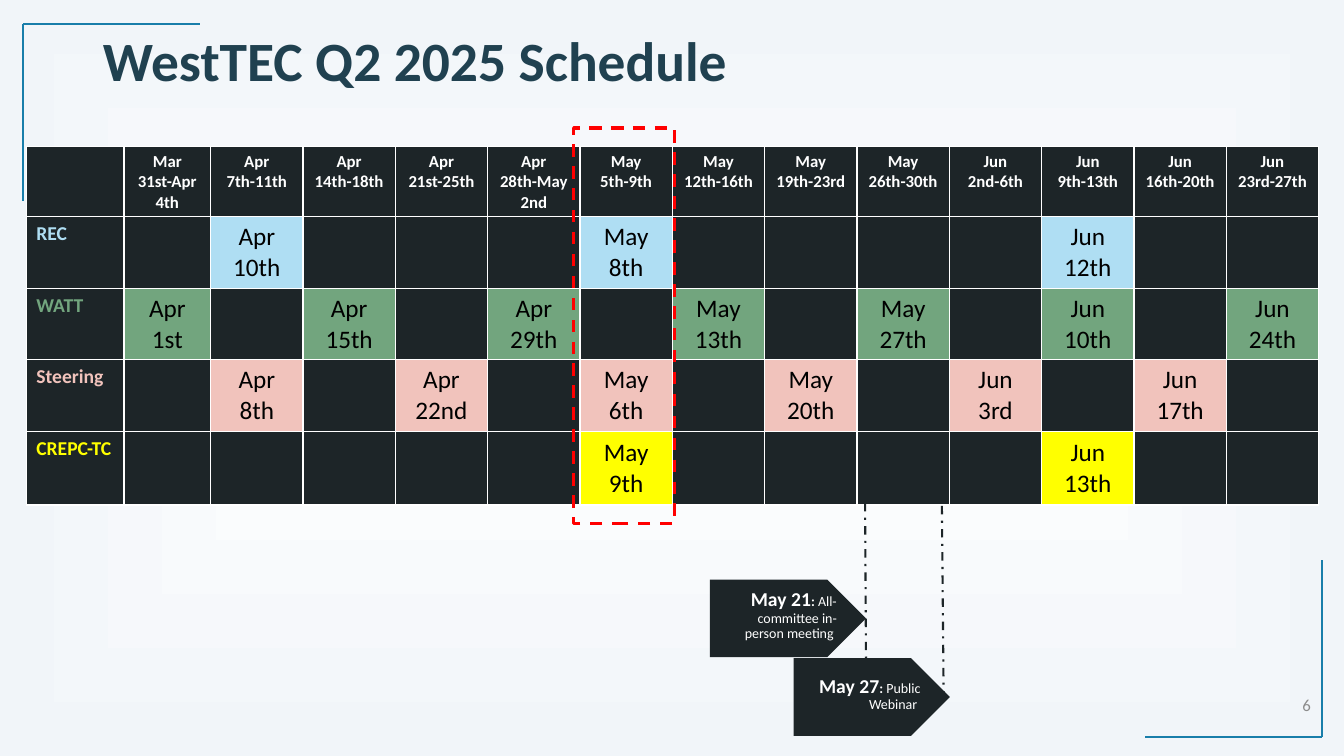
from dataclasses import dataclass

from lxml import etree
from pptx import Presentation
from pptx.dml.color import RGBColor
from pptx.enum.dml import MSO_LINE_DASH_STYLE as Dash
from pptx.enum.shapes import MSO_CONNECTOR as Connector, MSO_SHAPE as Shape
from pptx.enum.text import MSO_ANCHOR as Anchor, MSO_AUTO_SIZE as AutoSize, PP_ALIGN as Align
from pptx.oxml.ns import qn
from pptx.util import Inches, Pt


@dataclass(frozen=True)
class Theme:
    font: str = "Calibri"
    dark: str = "1D2528"
    white: str = "FFFFFF"
    black: str = "000000"
    backdrop: str = "F1F5F9"
    accent: str = "197EAA"
    title: str = "204150"
    number: str = "8C8C8C"
    highlight: str = "FF0000"
    title_size: float = 39.6
    date_size: float = 18
    label_size: float = 14
    small_size: float = 12
    note_size: float = 10


THEME = Theme()
WEEKS = [
    "Mar\n31st-Apr 4th", "Apr\n7th-11th", "Apr\n14th-18th", "Apr\n21st-25th",
    "Apr\n28th-May 2nd", "May\n5th-9th", "May\n12th-16th", "May\n19th-23rd",
    "May\n26th-30th", "Jun\n2nd-6th", "Jun\n9th-13th", "Jun\n16th-20th",
    "Jun 23rd-27th",
]
# Committee, colour, and meeting date by week column
COMMITTEES = [
    ("REC", "AFDEF3", {2: "Apr 10th", 6: "May 8th", 11: "Jun 12th"}),
    ("WATT", "72A57E", {1: "Apr 1st", 3: "Apr 15th", 5: "Apr 29th", 7: "May 13th",
                        9: "May 27th", 11: "Jun 10th", 13: "Jun 24th"}),
    ("Steering", "F1C3BC", {2: "Apr 8th", 4: "Apr 22nd", 6: "May 6th", 8: "May 20th",
                            10: "Jun 3rd", 12: "Jun 17th"}),
    ("CREPC-TC", "FFFF00", {6: "May 9th", 11: "Jun 13th"}),
]


def set_font(font, size, color, bold=False):
    font.name = THEME.font
    font.size = Pt(size)
    font.bold = bold
    font.color.rgb = RGBColor.from_string(color)


def add_line(slide, start, end, color, dash=None):
    line = slide.shapes.add_connector(
        Connector.STRAIGHT, *(Inches(value) for value in (*start, *end)))
    line.line.color.rgb = RGBColor.from_string(color)
    line.line.width = Pt(1.5)
    if dash:
        line.line.dash_style = dash
    etree.SubElement(line._element.spPr, qn("a:effectLst"))


def paint_background(slide):
    """Fill with a rectangular gradient, white at the centre."""
    fill = slide.background.fill
    fill.gradient()
    for stop, position, color in zip(fill.gradient_stops, (0, 1), (THEME.white, THEME.backdrop)):
        stop.position = position
        stop.color.rgb = RGBColor.from_string(color)
    gradient = slide.element.find(".//" + qn("a:gradFill"))
    gradient.remove(gradient.find(qn("a:lin")))
    rectangle = etree.SubElement(gradient, qn("a:path"), path="rect")
    etree.SubElement(rectangle, qn("a:fillToRect"), l="50000", t="50000", r="50000", b="50000")


def add_corner(slide, x, y, length):
    """Draw two lines meeting at (x, y); a negative length runs left and up."""
    add_line(slide, (x, y), (x, y + length), THEME.accent)
    add_line(slide, (x, y), (x + length, y), THEME.accent)


def add_title(slide, left, top, width, height):
    title = slide.shapes.title
    title.left, title.top, title.width, title.height = map(Inches, (left, top, width, height))
    frame = title.text_frame
    frame.text = "WestTEC Q2 2025 Schedule"
    frame.auto_size = AutoSize.NONE
    frame.vertical_anchor = Anchor.MIDDLE
    paragraph = frame.paragraphs[0]
    paragraph.alignment = Align.LEFT
    paragraph.line_spacing = 0.9
    set_font(paragraph.font, THEME.title_size, THEME.title, bold=True)


def add_slide_number(slide, left, top, width, height):
    box = slide.shapes.add_textbox(*map(Inches, (left, top, width, height)))
    frame = box.text_frame
    frame.word_wrap = True
    frame.vertical_anchor = Anchor.MIDDLE
    frame.text = "6"
    paragraph = frame.paragraphs[0]
    paragraph.alignment = Align.RIGHT
    set_font(paragraph.font, THEME.small_size, THEME.number)


def fill_cell(cell, text, fill, size, color, bold=True, alignment=Align.CENTER):
    cell.fill.solid()
    cell.fill.fore_color.rgb = RGBColor.from_string(fill)
    cell.text = text
    for paragraph in cell.text_frame.paragraphs:
        paragraph.alignment = alignment
        set_font(paragraph.font, size, color, bold)


def add_schedule(slide, left, top, width, height):
    """Place the table; its white borders come from the default table style."""
    label_width, first_week_width = 0.97, 0.86
    week_width = (width - label_width - first_week_width) / (len(WEEKS) - 1)
    table = slide.shapes.add_table(
        len(COMMITTEES) + 1, len(WEEKS) + 1, *map(Inches, (left, top, width, height))).table
    widths = [label_width, first_week_width] + [week_width] * (len(WEEKS) - 1)
    for column, column_width in zip(table.columns, widths):
        column.width = Inches(column_width)
    for row, row_height in zip(table.rows, (0.59, 0.71, 0.71, 0.71, 0.73)):
        row.height = Inches(row_height)

    for index, week in enumerate(["", *WEEKS]):
        fill_cell(table.cell(0, index), week, THEME.dark, THEME.small_size, THEME.white)
    for row, (name, color, meetings) in enumerate(COMMITTEES, 1):
        fill_cell(table.cell(row, 0), name, THEME.dark, THEME.label_size, color,
                  alignment=Align.LEFT)
        for index in range(1, len(WEEKS) + 1):
            cell = table.cell(row, index)
            fill = color if index in meetings else THEME.dark
            fill_cell(cell, meetings.get(index, ""), fill, THEME.date_size, THEME.black,
                      bold=False)
            cell.vertical_anchor = Anchor.MIDDLE


def add_callout(slide, left, top, date, event):
    callout = slide.shapes.add_shape(
        Shape.PENTAGON, *map(Inches, (left, top, 1.55, 0.77)))
    callout.shadow.inherit = False
    callout.fill.solid()
    callout.fill.fore_color.rgb = RGBColor.from_string(THEME.dark)
    callout.line.fill.background()
    frame = callout.text_frame
    frame.word_wrap = True
    frame.vertical_anchor = Anchor.MIDDLE
    paragraph = frame.paragraphs[0]
    paragraph.alignment = Align.RIGHT
    paragraph.line_spacing = Pt(11)
    for text, size, bold in ((date, THEME.label_size, True), (": ", THEME.note_size, True),
                             (event, THEME.note_size, False)):
        run = paragraph.add_run()
        run.text = text
        set_font(run.font, size, THEME.white, bold)


def add_highlight(slide, left, top, width, height):
    frame = slide.shapes.add_shape(
        Shape.RECTANGLE, *map(Inches, (left, top, width, height)))
    frame.shadow.inherit = False
    frame.fill.background()
    frame.line.color.rgb = RGBColor.from_string(THEME.highlight)
    frame.line.width = Pt(2.25)
    frame.line.dash_style = Dash.DASH


def build_schedule_slide(presentation):
    slide = presentation.slides.add_slide(presentation.slide_layouts[5])
    paint_background(slide)
    add_corner(slide, 0.23, 0.24, 1.75)
    add_corner(slide, 13.11, 7.31, -1.75)
    add_slide_number(slide, 12.48, 6.79, 0.62, 0.4)
    add_title(slide, 0.92, 0.4, 11.53, 0.47)
    add_schedule(slide, 0.26, 1.45, 12.82, 3.55)
    add_callout(slide, 7.04, 5.75, "May 21", "All-committee in-person meeting ")
    add_line(slide, (8.58, 4.99), (8.59, 6.66), THEME.dark, Dash.DASH_DOT)
    add_callout(slide, 7.87, 6.53, "May 27", "Public Webinar ")
    add_highlight(slide, 5.69, 1.27, 1, 3.92)
    add_line(slide, (9.34, 4.79), (9.36, 6.99), THEME.dark, Dash.DASH_DOT)


def main():
    presentation = Presentation()
    presentation.slide_width = Inches(13.33)
    presentation.slide_height = Inches(7.5)
    build_schedule_slide(presentation)
    presentation.save("out.pptx")


if __name__ == "__main__":
    main()
